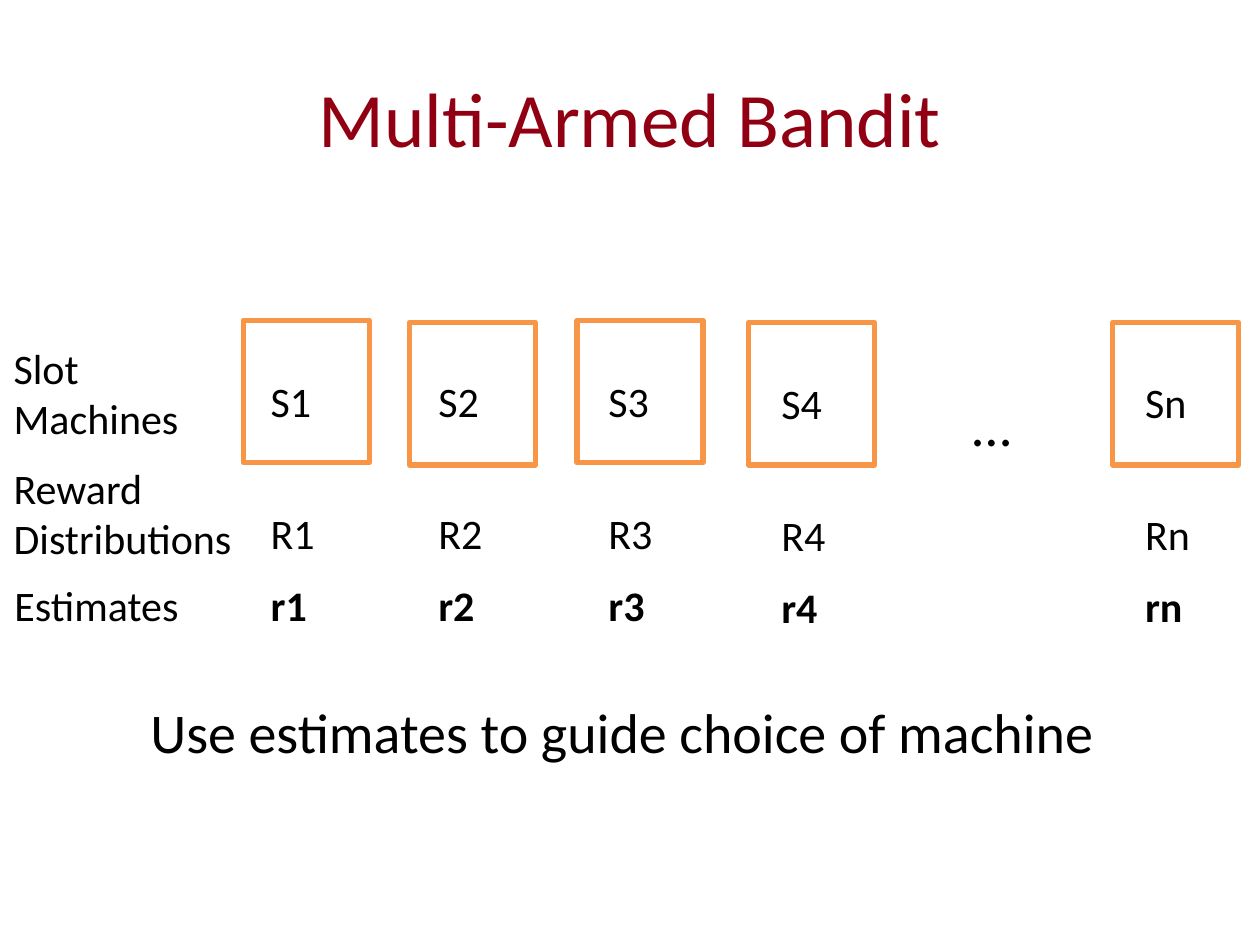
from dataclasses import dataclass

from pptx import Presentation
from pptx.dml.color import RGBColor
from pptx.enum.shapes import MSO_SHAPE
from pptx.enum.text import MSO_ANCHOR, MSO_AUTO_SIZE, PP_ALIGN
from pptx.util import Pt


@dataclass(frozen=True)
class Theme:
    font: str = "Calibri"
    title_color: RGBColor = RGBColor(0x91, 0x00, 0x12)
    text_color: RGBColor = RGBColor(0, 0, 0)
    machine_fill: RGBColor = RGBColor(0xFF, 0xFF, 0xFF)
    machine_line: RGBColor = RGBColor(0xF7, 0x96, 0x46)
    title_size: int = 44
    large_size: int = 32
    label_size: int = 24


THEME = Theme()

# Suffix, machine left and top, label inset from the machine, label drop
MACHINES = [
    ("1", 139, 183, 8.6, 0),
    ("2", 234, 184.3, 9.4, 0),
    ("3", 329.8, 183, 10.8, 0),
    ("4", 427.7, 184.3, 11.7, 1),
    ("n", 635.8, 184.3, 11.5, 0.8),
]
MACHINE_SIZE = (72, 81.4)

# Symbol, top, bold
LABEL_ROWS = [("S", 211, False), ("R", 286.5, False), ("r", 327.6, True)]

# Lines, box
ROW_HEADINGS = [
    (["Slot", "Machines"], (0.7, 192.2, 111, 65.5)),
    (["Reward", "Distributions"], (0.7, 260.6, 151, 65.5)),
    (["Estimates"], (1.2, 327.6, 122.4, 36)),
]


def add_text(page, lines, box, size=THEME.label_size, color=THEME.text_color,
             bold=False, align=PP_ALIGN.LEFT, anchor=MSO_ANCHOR.TOP):
    frame = page.shapes.add_textbox(*map(Pt, box)).text_frame
    frame.word_wrap = True
    frame.auto_size = MSO_AUTO_SIZE.NONE
    frame.vertical_anchor = anchor
    frame.text = "\n".join(lines)
    for para in frame.paragraphs:
        para.alignment = align
        para.font.name = THEME.font
        para.font.size = Pt(size)
        para.font.bold = bold
        para.font.color.rgb = color


def add_title(page, box):
    add_text(page, ["Multi-Armed Bandit"], box, THEME.title_size,
             THEME.title_color, align=PP_ALIGN.CENTER, anchor=MSO_ANCHOR.MIDDLE)


def add_machine(page, suffix, box, inset, drop):
    """Draw one slot machine with its name, reward and estimate labels."""
    machine = page.shapes.add_shape(MSO_SHAPE.RECTANGLE, *map(Pt, box))
    machine.shadow.inherit = False
    machine.fill.solid()
    machine.fill.fore_color.rgb = THEME.machine_fill
    machine.line.color.rgb = THEME.machine_line
    machine.line.width = Pt(3)
    for symbol, top, bold in LABEL_ROWS:
        add_text(page, [symbol + suffix], (box[0] + inset, top + drop, 54.7, 36),
                 bold=bold)


def add_row_headings(page):
    for lines, box in ROW_HEADINGS:
        add_text(page, lines, box)


def add_conclusion(page, box):
    add_text(page, ["Use estimates to guide choice of machine"], box,
             THEME.large_size, align=PP_ALIGN.CENTER)


def main():
    deck = Presentation()
    deck.slide_width, deck.slide_height = Pt(720), Pt(540)
    page = deck.slides.add_slide(deck.slide_layouts[6])
    add_title(page, (36, 21.6, 648, 90))
    for suffix, left, top, inset, drop in MACHINES:
        add_machine(page, suffix, (left, top, *MACHINE_SIZE), inset, drop)
    add_text(page, ["…"], (548.6, 219.6, 54.7, 46), THEME.large_size)
    add_row_headings(page)
    add_conclusion(page, (74.2, 395.3, 563, 46))
    deck.save("out.pptx")


if __name__ == "__main__":
    main()
